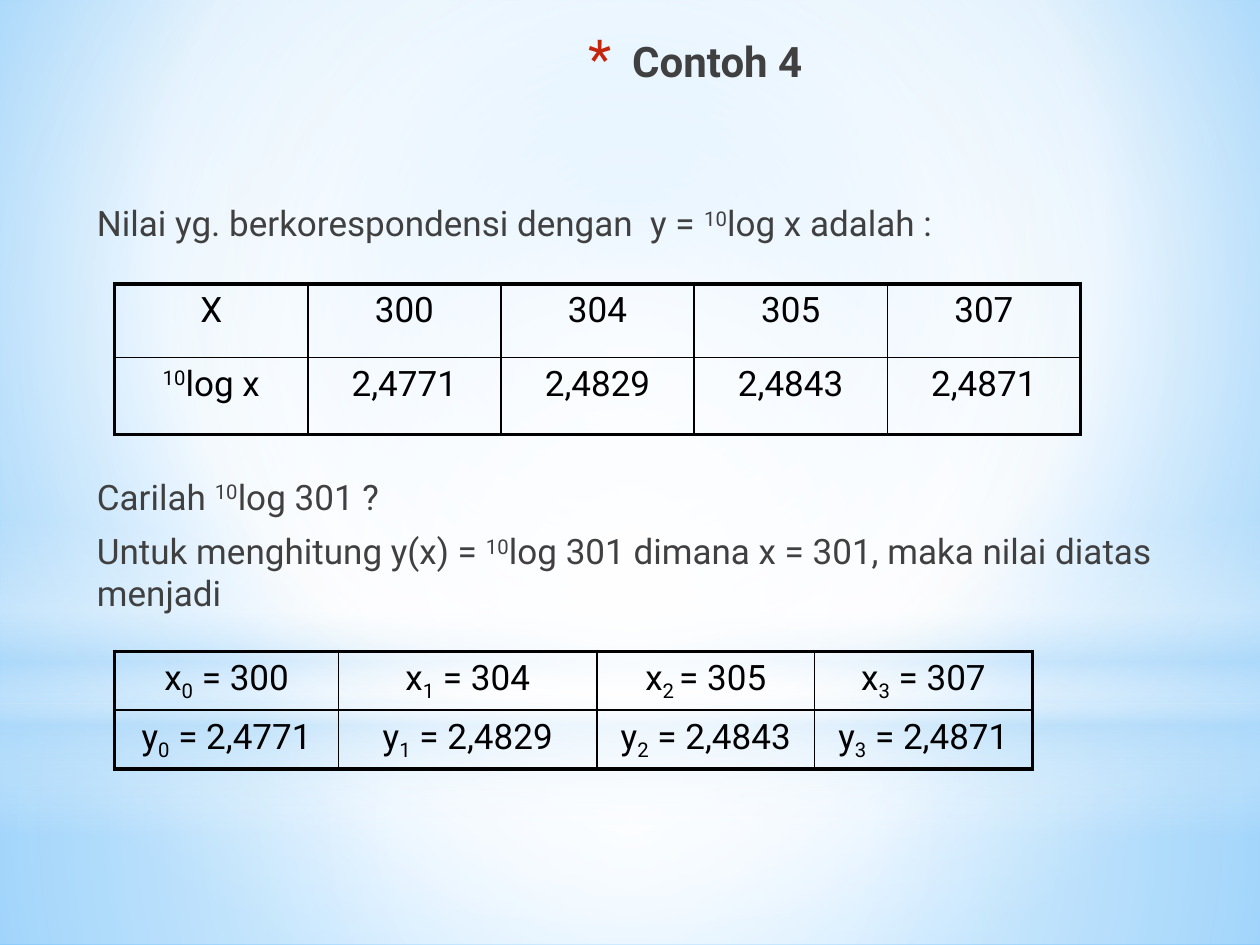
from pptx import Presentation
from pptx.dml.color import RGBColor
from pptx.enum import shapes, text
from pptx.oxml import parse_xml
from pptx.oxml.ns import nsdecls
from pptx.util import Pt

BLACK = RGBColor(0x00, 0x00, 0x00)
GREY = RGBColor(0x40, 0x40, 0x40)
RED = RGBColor(0xC3, 0x26, 0x0C)
WHITE = RGBColor(0xFF, 0xFF, 0xFF)
PALE = RGBColor(0xB4, 0xDC, 0xFA)
SKY = RGBColor(0x9E, 0xD5, 0xFF)
BLUE = RGBColor(0x5B, 0xB9, 0xFF)

FONT = "Roboto"
BASELINES = {"^": "30000", "_": "-25000"}
CENTER = (50, 50, 50, 50)
THICK, THIN = 2.25, 1


def xml(tag, attrs="", inner=""):
    return parse_xml(f"<a:{tag} {nsdecls('a')} {attrs}>{inner}</a:{tag}>")


def set_gradient(fill, owner, stops, focus=None):
    """Fill with (position, colour, alpha) stops: circular around focus, else downwards."""
    fill.gradient()
    old = owner.find(".//{*}gradFill")
    gs = "".join(
        f'<a:gs pos="{pos * 1000}"><a:srgbClr val="{color}">'
        f'<a:alpha val="{alpha * 1000}"/></a:srgbClr></a:gs>'
        for pos, color, alpha in stops)
    if focus:
        l, t, r, b = (v * 1000 for v in focus)
        shade = (f'<a:path path="circle"><a:fillToRect l="{l}" t="{t}" '
                 f'r="{r}" b="{b}"/></a:path>')
    else:
        shade = '<a:lin ang="5400000" scaled="0"/>'
    old.getparent().replace(
        old, xml("gradFill", 'rotWithShape="1"', f"<a:gsLst>{gs}</a:gsLst>{shade}"))


def add_glow(s, kind, top, height, stops, focus=None):
    sp = s.shapes.add_shape(kind, 0, Pt(top), Pt(720), Pt(height))
    sp.shadow.inherit = False
    sp.line.fill.background()
    set_gradient(sp.fill, sp._element, stops, focus)


def add_backdrop(s):
    rect, oval = shapes.MSO_SHAPE.RECTANGLE, shapes.MSO_SHAPE.OVAL
    set_gradient(s.background.fill, s._element,
                 [(0, SKY, 100), (60, WHITE, 100), (100, BLUE, 100)], (20, 10, 20, 60))
    add_glow(s, rect, 402, 138, [(0, WHITE, 91), (37, WHITE, 76), (100, PALE, 79)], CENTER)
    add_glow(s, rect, 0, 402, [(0, WHITE, 89), (48, WHITE, 62), (100, PALE, 79)], CENTER)
    add_glow(s, rect, 297, 180, [(0, WHITE, 0), (29, WHITE, 30), (45, PALE, 40),
                                 (55, WHITE, 26), (65, PALE, 60), (100, WHITE, 0)])
    add_glow(s, oval, 126, 402, [(0, WHITE, 100), (56, WHITE, 0)], CENTER)


def write(p, words, size=20, color=GREY, bold=False, align=text.PP_ALIGN.LEFT,
          before=0, after=0, bullet=None):
    """Write words split at "|"; a part led by ^ is raised, one led by _ lowered."""
    pPr = p._p.get_or_add_pPr()
    if bullet:
        pPr.set("marL", str(Pt(25)))
        pPr.set("indent", str(-Pt(25)))
        pPr.append(xml("buClr", inner=f'<a:srgbClr val="{RED}"/>'))
        pPr.append(xml("buSzPct", 'val="128000"'))
        pPr.append(xml("buFont", f'typeface="{FONT}"'))
        pPr.append(xml("buChar", f'char="{bullet}"'))
    else:
        pPr.set("marL", "0")
        pPr.set("indent", "0")
        pPr.append(xml("buNone"))
    p.alignment = align
    p.space_before, p.space_after = Pt(before), Pt(after)
    for part in words.split("|"):
        r = p.add_run()
        r.text = part.lstrip("^_")
        r.font.name, r.font.size = FONT, Pt(size)
        r.font.bold = bold
        r.font.color.rgb = color
        if part[0] in BASELINES:
            r.font._element.set("baseline", BASELINES[part[0]])


def place(s, sp, left, top, width, height):
    """Move a placeholder to the front and prepare its text frame."""
    s.shapes._spTree.append(sp._element)
    sp.left, sp.top, sp.width, sp.height = Pt(left), Pt(top), Pt(width), Pt(height)
    tf = sp.text_frame
    tf.word_wrap = True
    tf.auto_size = text.MSO_AUTO_SIZE.NONE
    tf.vertical_anchor = text.MSO_ANCHOR.TOP
    return tf


def set_borders(cell, **widths):
    tcPr = cell._tc.get_or_add_tcPr()
    for side in "LRTB":
        tcPr.append(xml(f"ln{side}", f'w="{Pt(widths[side])}"',
                        f'<a:solidFill><a:srgbClr val="{BLACK}"/></a:solidFill>'))


def add_grid(s, top, widths, heights, rows):
    frame = s.shapes.add_table(len(rows), len(widths), Pt(65.5), Pt(top),
                               Pt(sum(widths)), Pt(sum(heights)))
    table = frame.table
    table.first_row = table.horz_banding = False
    for column, width in zip(table.columns, widths):
        column.width = Pt(width)
    for i, row in enumerate(rows):
        table.rows[i].height = Pt(heights[i])
        for j, words in enumerate(row):
            cell = table.cell(i, j)
            set_borders(cell,
                        L=THIN if j else THICK,
                        R=THICK if j == len(row) - 1 else THIN,
                        T=THIN if i else THICK,
                        B=THICK if i == len(rows) - 1 else THIN)
            cell.fill.background()
            write(cell.text_frame.paragraphs[0], words, color=BLACK,
                  align=text.PP_ALIGN.CENTER)


def main():
    prs = Presentation()
    prs.slide_width, prs.slide_height = Pt(720), Pt(540)
    s = prs.slides.add_slide(prs.slide_layouts[1])
    add_backdrop(s)

    tf = place(s, s.shapes.title, 90.7, 16.6, 613.4, 85)
    write(tf.paragraphs[0], "Contoh 4", size=24, bold=True,
          align=text.PP_ALIGN.CENTER, bullet="*")

    tf = place(s, s.placeholders[1], 48.2, 111.6, 653.8, 362.9)
    write(tf.paragraphs[0],
          "Nilai yg. berkorespondensi dengan  y = |^10|log x adalah :", after=3)
    # The wide gap leaves room for the first table.
    write(tf.add_paragraph(), "Carilah |^10|log 301 ?", before=129.5, after=3)
    write(tf.add_paragraph(), "Untuk menghitung y(x) = |^10|log 301 dimana x = 301, "
          "maka nilai diatas menjadi", before=4, after=3)

    xs = ["300", "304", "305", "307"]
    ys = ["2,4771", "2,4829", "2,4843", "2,4871"]
    add_grid(s, 162.3, [110.4] * 5, [42, 44], [["X"] + xs, ["^10|log x"] + ys])
    x_cells = [f"x|_{i}| = {x}" for i, x in enumerate(xs)]
    x_cells[2] = "x|_2 |= 305"
    y_cells = [f"y|_{i}| = {y}" for i, y in enumerate(ys)]
    add_grid(s, 372.2, [128, 147.6, 124.4, 124.4], [33.5, 33.5], [x_cells, y_cells])

    prs.save("out.pptx")


if __name__ == "__main__":
    main()
